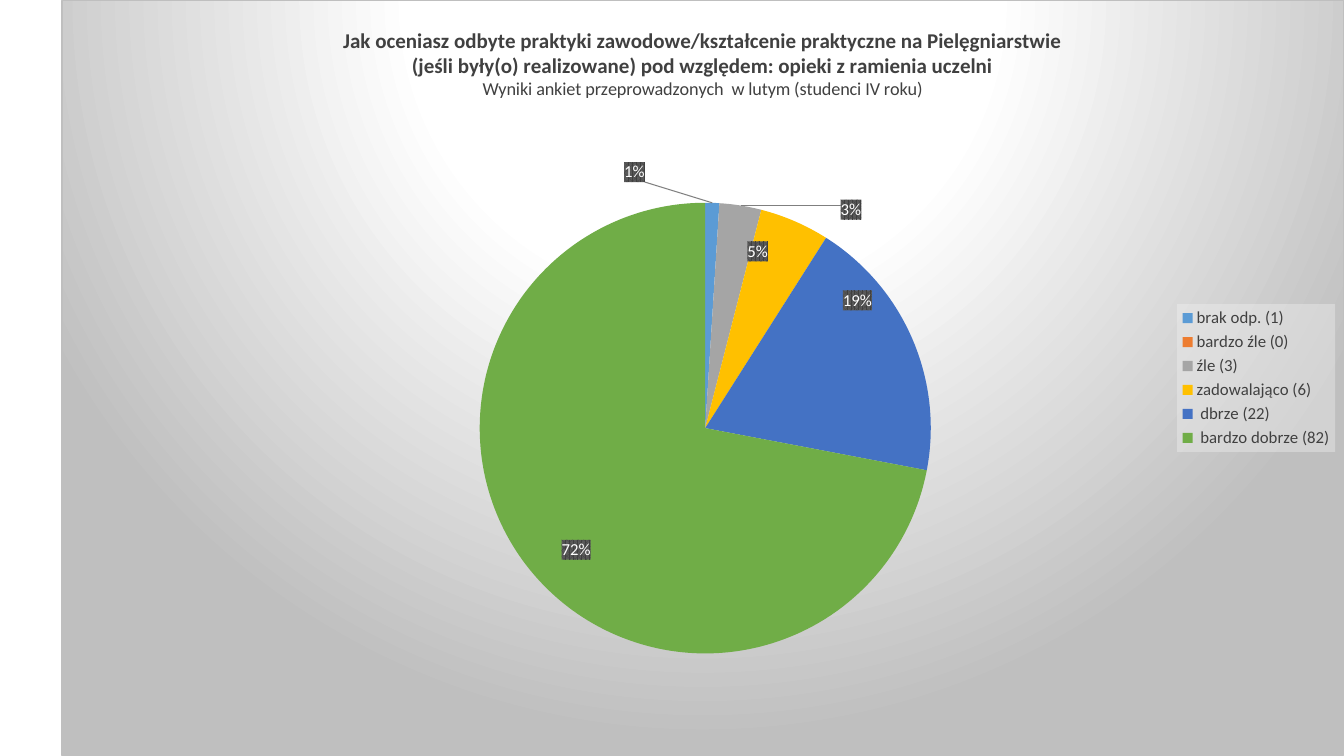
from copy import deepcopy
from dataclasses import dataclass

from pptx import Presentation
from pptx.chart.data import CategoryChartData
from pptx.dml.color import RGBColor
from pptx.enum.chart import XL_CHART_TYPE as ChartType
from pptx.enum.chart import XL_LABEL_POSITION as LabelPosition
from pptx.enum.chart import XL_LEGEND_POSITION as LegendPosition
from pptx.oxml import parse_xml
from pptx.oxml.ns import nsdecls
from pptx.util import Inches, Pt


@dataclass(frozen=True)
class Theme:
    font: str = "Calibri"
    text: str = "404040"
    label_text: str = "FFFFFF"
    label_back: str = "595959"
    center: str = "FFFFFF"
    edge: str = "BFBFBF"
    legend_fill: str = "F2F2F2"
    leader: str = "7F7F7F"
    title_size: int = 15
    subtitle_size: int = 13
    label_size: int = 12


THEME = Theme()
TITLE_LINES = [
    ("Jak oceniasz odbyte praktyki zawodowe/kształcenie praktyczne na Pielęgniarstwie", True),
    ("(jeśli były(o) realizowane) pod względem: opieki z ramienia uczelni", True),
    ("Wyniki ankiet przeprowadzonych  w lutym (studenci IV roku)", False),
]
ANSWERS = [
    ("brak odp. (1)", 1, "5B9BD5", (-0.058, -0.19)),
    ("bardzo źle (0)", 0, "ED7D31", None),
    ("źle (3)", 3, "A5A5A5", (0.1, -0.142)),
    ("zadowalająco (6)", 5, "FFC000", (0.006, -0.097)),
    (" dbrze (22)", 19, "4472C4", (0.038, -0.11)),
    (" bardzo dobrze (82)", 72, "70AD47", (-0.033, 0.066)),
]


def chart_xml(tag, body):
    return parse_xml(f'<c:{tag} {nsdecls("c", "a")}>{body}</c:{tag}>')


def solid(color, alpha=100):
    return (f'<a:solidFill><a:srgbClr val="{color}"><a:alpha val="{alpha * 1000}"/>'
            '</a:srgbClr></a:solidFill>')


def style_font(font, size, color, bold=False):
    font.name = THEME.font
    font.size = Pt(size)
    font.bold = bold
    font.color.rgb = RGBColor.from_string(color)


def manual_layout(x, y, size=None, absolute=True):
    body = '<c:layoutTarget val="inner"/>' if size else ""
    if absolute:
        body += '<c:xMode val="edge"/><c:yMode val="edge"/>'
    body += f'<c:x val="{x}"/><c:y val="{y}"/>'
    if size:
        body += f'<c:w val="{size[0]}"/><c:h val="{size[1]}"/>'
    return chart_xml("layout", f"<c:manualLayout>{body}</c:manualLayout>")


def place(part, layout, index):
    for old_layout in part.xpath("c:layout"):
        part.remove(old_layout)
    part.insert(index, layout)


def add_pie(slide):
    data = CategoryChartData()
    data.categories = [name for name, *_ in ANSWERS]
    data.add_series("Series 1", [percent for _, percent, *_ in ANSWERS])
    pie = slide.shapes.add_chart(ChartType.PIE, Inches(0.61), 0, Inches(12.72),
                                 Inches(7.5), data).chart
    style_font(pie.font, THEME.label_size, THEME.text)
    pie.plots[0].vary_by_categories = True
    points = pie.plots[0].series[0].points
    for index, (_, _, color, _) in enumerate(ANSWERS):
        fill = points[index].format.fill
        fill.solid()
        fill.fore_color.rgb = RGBColor.from_string(color)
    place(pie.element.xpath(".//c:plotArea")[0],
          manual_layout(0.326, 0.268, (0.352, 0.597)), 0)
    return pie


def set_background(pie):
    stops = [(0, THEME.center), (39, THEME.center), (100, THEME.edge)]
    gradient = "".join(f'<a:gs pos="{at * 1000}"><a:srgbClr val="{color}"/></a:gs>'
                       for at, color in stops)
    background = chart_xml("spPr", (
        f'<a:gradFill><a:gsLst>{gradient}</a:gsLst><a:path path="circle">'
        '<a:fillToRect l="50000" t="-80000" r="50000" b="180000"/></a:path></a:gradFill>'
        f'<a:ln w="{Pt(0.75)}">{solid(THEME.edge)}</a:ln>'))
    pie.element.xpath("c:chart")[0].addnext(background)


def set_title(pie):
    pie.has_title = True
    frame = pie.chart_title.text_frame
    for index, (line, is_heading) in enumerate(TITLE_LINES):
        paragraph = frame.add_paragraph() if index else frame.paragraphs[0]
        paragraph.text = line
        size = THEME.title_size if is_heading else THEME.subtitle_size
        style_font(paragraph.font, size, THEME.text, is_heading)
    place(pie.element.xpath("c:chart/c:title")[0], manual_layout(0.217, 0.03), 1)


def set_legend(pie):
    pie.has_legend = True
    pie.legend.position = LegendPosition.RIGHT
    pie.legend.include_in_layout = False
    style_font(pie.legend.font, THEME.label_size, THEME.text)
    pie.element.xpath(".//c:legend/c:txPr")[0].addprevious(
        chart_xml("spPr", solid(THEME.legend_fill, 39)))


def set_percent_labels(pie):
    labels = pie.plots[0].series[0].data_labels
    labels.number_format = "0%"
    labels.number_format_is_linked = False
    style_font(labels.font, THEME.label_size, THEME.label_text)
    labels.position = LabelPosition.CENTER
    labels.show_value = False
    labels.show_percentage = True
    group = pie.element.xpath(".//c:ser/c:dLbls")[0]
    group.xpath("c:txPr")[0].addprevious(chart_xml("spPr", (
        f'<a:pattFill prst="pct75"><a:fgClr><a:srgbClr val="{THEME.text}"/></a:fgClr>'
        f'<a:bgClr><a:srgbClr val="{THEME.label_back}"/></a:bgClr></a:pattFill>')))
    shared = [part for part in group
              if not part.tag.endswith(("}showLeaderLines", "}leaderLines"))]
    for index, (*_, offset) in enumerate(ANSWERS):
        label = chart_xml("dLbl", f'<c:idx val="{index}"/>')
        if offset:
            label.append(manual_layout(*offset, absolute=False))
            label.extend(deepcopy(part) for part in shared)
        else:
            label.append(parse_xml(f'<c:delete {nsdecls("c")} val="1"/>'))
        group.insert(index, label)
    for old_setting in group.xpath("c:showLeaderLines"):
        group.remove(old_setting)
    group.append(parse_xml(f'<c:showLeaderLines {nsdecls("c")} val="1"/>'))
    group.append(chart_xml("leaderLines", (
        f'<c:spPr><a:ln w="{Pt(0.75)}">{solid(THEME.leader)}</a:ln></c:spPr>')))


def main():
    deck = Presentation()
    deck.slide_width = Inches(13.33)
    deck.slide_height = Inches(7.5)
    slide = deck.slides.add_slide(deck.slide_layouts[6])
    pie = add_pie(slide)
    set_background(pie)
    set_title(pie)
    set_legend(pie)
    set_percent_labels(pie)
    deck.save("out.pptx")


if __name__ == "__main__":
    main()
